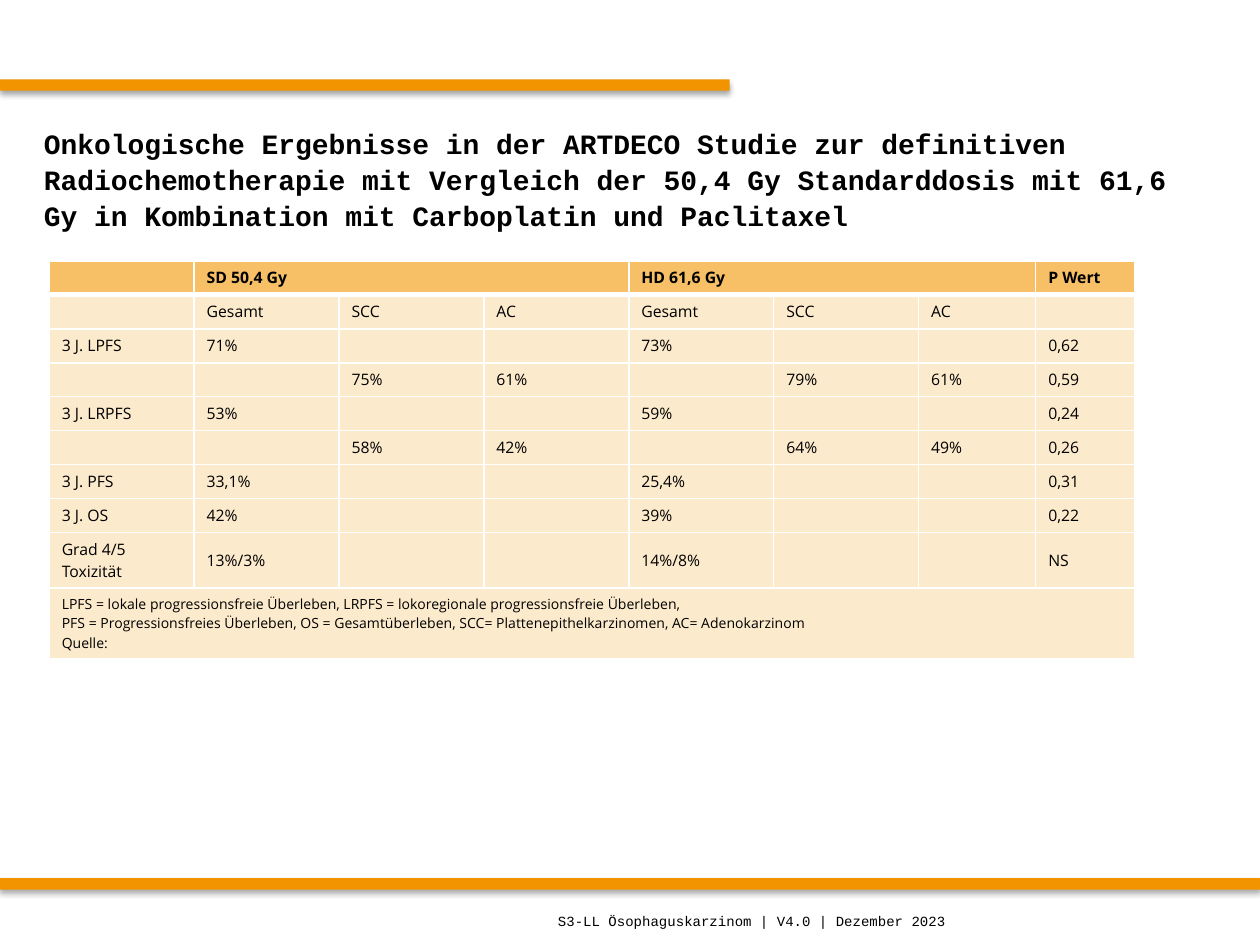
from lxml.etree import SubElement
from pptx import Presentation
from pptx.dml.color import RGBColor
from pptx.enum.shapes import MSO_SHAPE
from pptx.enum.text import MSO_ANCHOR as Anchor
from pptx.oxml import parse_xml
from pptx.oxml.ns import nsdecls, qn
from pptx.util import Inches, Pt

BLACK = RGBColor(0, 0, 0)
WHITE = RGBColor(0xFF, 0xFF, 0xFF)
ORANGE = RGBColor(0xF2, 0x94, 0x00)
HEADER_FILL = RGBColor(0xF7, 0xBF, 0x66)
BODY_FILL = RGBColor(0xFC, 0xEA, 0xCC)
MONO = "Courier New"
SANS = "Open Sans"

TITLE = (
    "Onkologische Ergebnisse in der ARTDECO Studie zur definitiven "
    "Radiochemotherapie mit Vergleich der 50,4 Gy Standarddosis mit 61,6 Gy "
    "in Kombination mit Carboplatin und Paclitaxel"
)
FOOTER = "S3-LL Ösophaguskarzinom | V4.0 | Dezember 2023"
RESULTS = [
    ["", "SD 50,4 Gy", "", "", "HD 61,6 Gy", "", "", "P Wert"],
    ["", "Gesamt", "SCC", "AC", "Gesamt", "SCC", "AC", ""],
    ["3 J. LPFS", "71%", "", "", "73%", "", "", "0,62"],
    ["", "", "75%", "61%", "", "79%", "61%", "0,59"],
    ["3 J. LRPFS", "53%", "", "", "59%", "", "", "0,24"],
    ["", "", "58%", "42%", "", "64%", "49%", "0,26"],
    ["3 J. PFS", "33,1%", "", "", "25,4%", "", "", "0,31"],
    ["3 J. OS", "42%", "", "", "39%", "", "", "0,22"],
    ["Grad 4/5 Toxizität", "13%/3%", "", "", "14%/8%", "", "", "NS"],
]
LEGEND = [
    "LPFS = lokale progressionsfreie Überleben, "
    "LRPFS = lokoregionale progressionsfreie Überleben,\n"
    "PFS = Progressionsfreies Überleben, OS = Gesamtüberleben, "
    "SCC= Plattenepithelkarzinomen, AC= Adenokarzinom",
    "Quelle:",
]
COLUMN_WIDTHS = [1.15] * 6 + [0.93, 0.79]
ROW_HEIGHTS = [0.27] * 8 + [0.44, 0.56]
LEGEND_ROW = len(RESULTS)
LAST_COLUMN = len(COLUMN_WIDTHS) - 1
MERGES = [(0, 1, 3), (0, 4, 6), (LEGEND_ROW, 0, LAST_COLUMN)]
BARS = [(0.63, 5.79), (6.97, 10)]


def write(frame, paragraphs, *, font, size, bold=False, spacing=None):
    frame.word_wrap = True
    for index, text in enumerate(paragraphs):
        paragraph = frame.paragraphs[0] if index == 0 else frame.add_paragraph()
        paragraph.text = text
        paragraph.line_spacing = spacing
        for style in [paragraph.font, *(run.font for run in paragraph.runs)]:
            style.name = font
            style.size = Pt(size)
            style.bold = bold
            style.color.rgb = BLACK


def add_text(slide, box, text, **style):
    frame = slide.shapes.add_textbox(*map(Inches, box)).text_frame
    frame.vertical_anchor = Anchor.MIDDLE
    write(frame, [text], **style)


def add_bar(slide, top, width):
    bar = slide.shapes.add_shape(
        MSO_SHAPE.RECTANGLE, 0, Inches(top), Inches(width), Inches(0.09)
    )
    bar.fill.solid()
    bar.fill.fore_color.rgb = ORANGE
    bar.line.fill.background()
    bar.shadow.inherit = False
    effects = bar._element.spPr.find(qn("a:effectLst"))
    shadow = SubElement(
        effects, qn("a:outerShdw"), blurRad=str(Pt(3.1)), dist=str(Pt(1.8)),
        dir="5400000", algn="t", rotWithShape="0",
    )
    color = SubElement(shadow, qn("a:srgbClr"), val=str(BLACK))
    SubElement(color, qn("a:alpha"), val="35000")


def set_borders(cell, top, bottom):
    properties = cell._tc.get_or_add_tcPr()
    sides = {"lnL": 1, "lnR": 1, "lnT": top, "lnB": bottom}
    for index, (side, width) in enumerate(sides.items()):
        border = parse_xml(
            f'<a:{side} {nsdecls("a")} w="{Pt(width)}"><a:solidFill>'
            f'<a:srgbClr val="{WHITE}"/></a:solidFill></a:{side}>'
        )
        properties.insert(index, border)


def add_results(slide):
    table = slide.shapes.add_table(
        len(ROW_HEIGHTS), len(COLUMN_WIDTHS), Inches(0.39), Inches(2.07),
        Inches(sum(COLUMN_WIDTHS)), Inches(sum(ROW_HEIGHTS)),
    ).table
    table.first_row = False
    table.horz_banding = False
    for column, width in zip(table.columns, COLUMN_WIDTHS):
        column.width = Inches(width)
    for row, height in zip(table.rows, ROW_HEIGHTS):
        row.height = Inches(height)
    for row, first, last in MERGES:
        table.cell(row, first).merge(table.cell(row, last))

    legend_cells = [LEGEND] + [[""]] * LAST_COLUMN
    contents = [[[text] for text in row] for row in RESULTS] + [legend_cells]
    for row, values in enumerate(contents):
        header = row == 0
        for column, paragraphs in enumerate(values):
            cell = table.cell(row, column)
            cell.vertical_anchor = Anchor.MIDDLE
            cell.fill.solid()
            cell.fill.fore_color.rgb = HEADER_FILL if header else BODY_FILL
            set_borders(cell, 3 if row == 1 else 1, 3 if header else 1)
            size = 8 if row == LEGEND_ROW else 9
            write(cell.text_frame, paragraphs, font=SANS, size=size, bold=header)


def main():
    deck = Presentation()
    deck.slide_width = Inches(10)
    deck.slide_height = Inches(7.5)
    slide = deck.slides.add_slide(deck.slide_layouts[6])
    for top, width in BARS:
        add_bar(slide, top, width)
    add_text(slide, (0.25, 0.83, 9.5, 1.17), TITLE,
             font=MONO, size=16, bold=True, spacing=1.06)
    add_results(slide)
    add_text(slide, (4.33, 7.11, 5.51, 0.39), FOOTER, font=MONO, size=8)
    deck.save("out.pptx")


if __name__ == "__main__":
    main()
